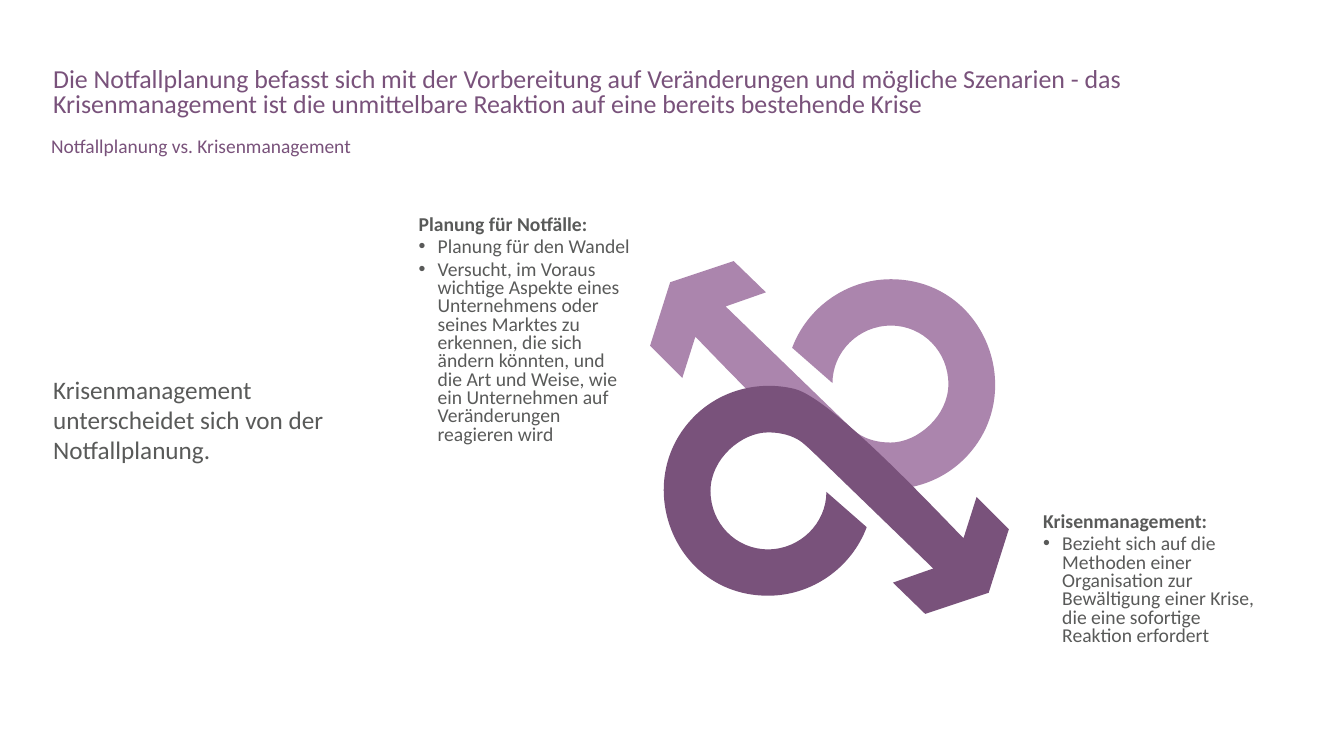
from lxml import etree
from pptx import Presentation
from pptx.dml.color import RGBColor
from pptx.enum import text as t
from pptx.oxml import ns
from pptx.util import Cm, Pt

GREY = RGBColor(0x59, 0x5A, 0x59)
PLUM = RGBColor(0x79, 0x52, 0x7B)
LILAC = RGBColor(0xAB, 0x85, 0xAD)

INCH = 2.54  # centimetres
ARROW_CENTRE = (8.23, 4.34)

# Looped arrow in inches: one point ends a line, three describe a curve
ARROW_START = (9.57, 4.55)
ARROW_SEGMENTS = [
    [(9.31, 4.81), (8.93, 4.91), (8.57, 4.82)],
    [(8.21, 4.72), (7.26, 3.71), (6.9, 3.34)],
    [(6.77, 3.75)], [(6.45, 3.43)], [(6.65, 2.8)], [(7.28, 2.59)],
    [(7.6, 2.9)], [(7.2, 3.04)], [(8.46, 4.26)],
    [(8.55, 4.34), (8.67, 4.39), (8.84, 4.39)],
    [(9.1, 4.39), (9.41, 4.13), (9.41, 3.81)],
    [(9.41, 3.49), (9.16, 3.23), (8.84, 3.23)],
    [(8.52, 3.23), (8.26, 3.49), (8.26, 3.8)],
    [(7.86, 3.45)],
    [(8.01, 3.05), (8.4, 2.77), (8.84, 2.77)],
    [(9.78, 2.77), (10.21, 3.91), (9.57, 4.55)],
]


def bend_segments(arrow):
    """Join each three steps of a curved segment into one cubic curve."""
    steps = iter(arrow._element.findall(".//" + ns.qn("a:lnTo")))
    for segment in ARROW_SEGMENTS:
        group = [next(steps) for _ in segment]
        if len(group) == 3:
            group[0].tag = ns.qn("a:cubicBezTo")
            for step in group[1:]:
                group[0].append(step[0])
                step.getparent().remove(step)


def add_arrow(page, color, turned=False):
    """Draw the looped arrow, or the same one turned by half a circle."""
    points = [ARROW_START] + [p for segment in ARROW_SEGMENTS for p in segment]
    if turned:
        points = [tuple(2 * c - v for c, v in zip(ARROW_CENTRE, point))
                  for point in points]
    points = [(Cm(x * INCH), Cm(y * INCH)) for x, y in points]
    builder = page.shapes.build_freeform(*points[0])
    builder.add_line_segments(points[1:], close=True)
    arrow = builder.convert_to_shape()
    bend_segments(arrow)
    arrow.shadow.inherit = False
    arrow.fill.solid()
    arrow.fill.fore_color.rgb = color
    arrow.line.fill.background()


def add_bullet(para):
    properties = para._p.get_or_add_pPr()
    properties.set("marL", str(Cm(0.48)))
    properties.set("indent", str(-Cm(0.48)))
    etree.SubElement(properties, ns.qn("a:buFont")).set("typeface", "Arial")
    etree.SubElement(properties, ns.qn("a:buChar")).set("char", "•")


def add_text(page, place, lines, size, color, spacing=None, before=0,
             headed=False, anchor=t.MSO_ANCHOR.TOP, insets=None):
    """Add a text box; a headed one has a bold first line and bullets below."""
    box = page.shapes.add_textbox(*(Cm(length) for length in place))
    frame = box.text_frame
    frame.word_wrap = True
    frame.vertical_anchor = anchor
    if insets:
        frame.margin_left = frame.margin_right = Cm(insets[0])
        frame.margin_top = frame.margin_bottom = Cm(insets[1])
    for index, line in enumerate(lines):
        para = frame.paragraphs[0] if index == 0 else frame.add_paragraph()
        if headed and index:
            add_bullet(para)
        if spacing:
            para.line_spacing = spacing
        para.space_before = Pt(before if index else 0)
        span = para.add_run()
        span.text = line
        span.font.name = "Calibri"
        span.font.size = Pt(size)
        span.font.color.rgb = color
        span.font.bold = headed and index == 0


def add_note(page, place, lines):
    add_text(page, place, lines, 14, GREY, spacing=Pt(13.1), before=3,
             headed=True, insets=(0.1, 0.05))


def main():
    deck = Presentation()
    deck.slide_width, deck.slide_height = Cm(33.87), Cm(19.05)
    page = deck.slides.add_slide(deck.slide_layouts[6])

    # Key message
    add_text(page, (1.09, 4.55, 8.86, 12.05),
             ["Krisenmanagement unterscheidet sich von der Notfallplanung."],
             18, GREY, anchor=t.MSO_ANCHOR.MIDDLE)

    # Headings
    add_text(page, (1.09, 1.6, 31.85, 1.63),
             ["Die Notfallplanung befasst sich mit der Vorbereitung auf "
              "Veränderungen und mögliche Szenarien - das Krisenmanagement ist "
              "die unmittelbare Reaktion auf eine bereits bestehende Krise"],
             18.5, PLUM, spacing=0.8)
    add_text(page, (1.04, 3.41, 31.9, 0.71),
             ["Notfallplanung vs. Krisenmanagement"], 13.9, PLUM, spacing=0.7)

    # Interlocked arrows
    add_arrow(page, LILAC)
    add_arrow(page, PLUM, turned=True)

    # Notes beside the arrowheads
    add_note(page, (10.45, 5.41, 5.56, 5.92),
             ["Planung für Notfälle:",
              "Planung für den Wandel",
              "Versucht, im Voraus wichtige Aspekte eines Unternehmens oder "
              "seines Marktes zu erkennen, die sich ändern könnten, und die Art "
              "und Weise, wie ein Unternehmen auf Veränderungen reagieren wird"])
    add_note(page, (26.19, 12.9, 5.56, 3.43),
             ["Krisenmanagement:",
              "Bezieht sich auf die Methoden einer Organisation zur Bewältigung "
              "einer Krise, die eine sofortige Reaktion erfordert"])

    deck.save("out.pptx")


if __name__ == "__main__":
    main()
